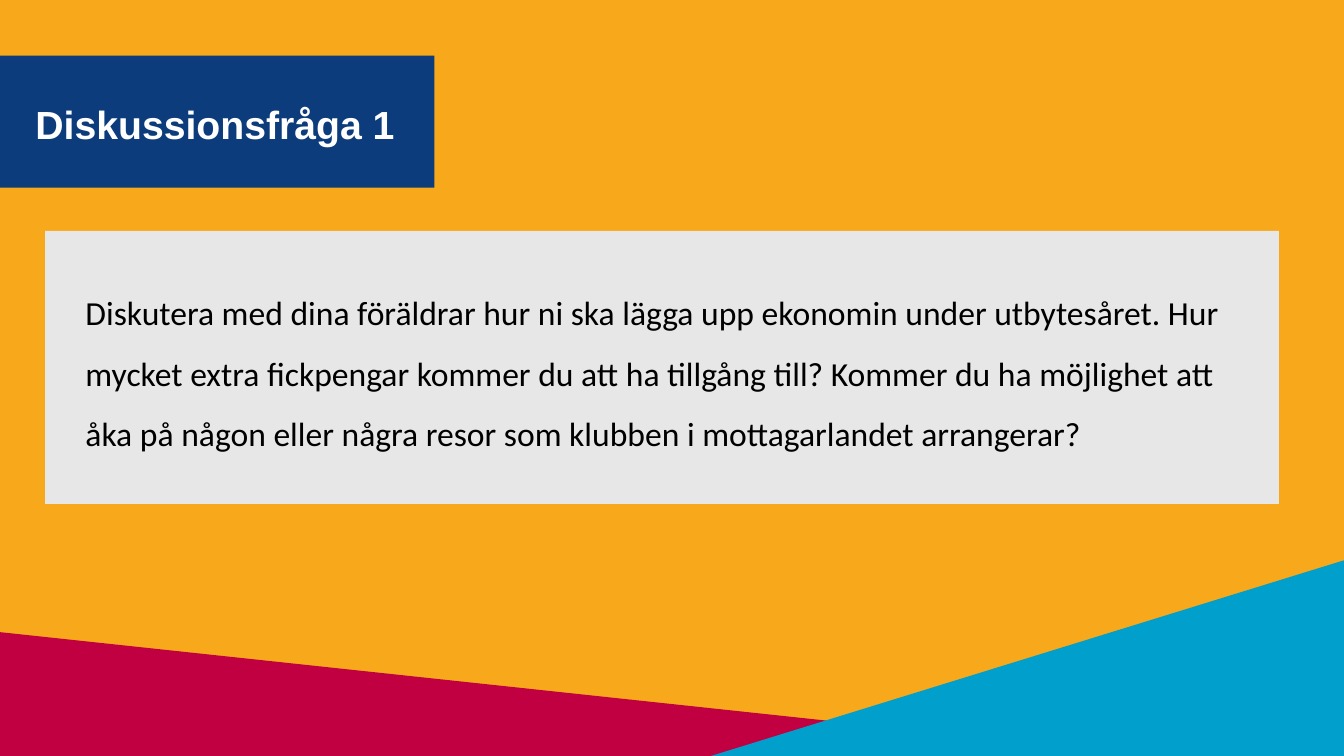
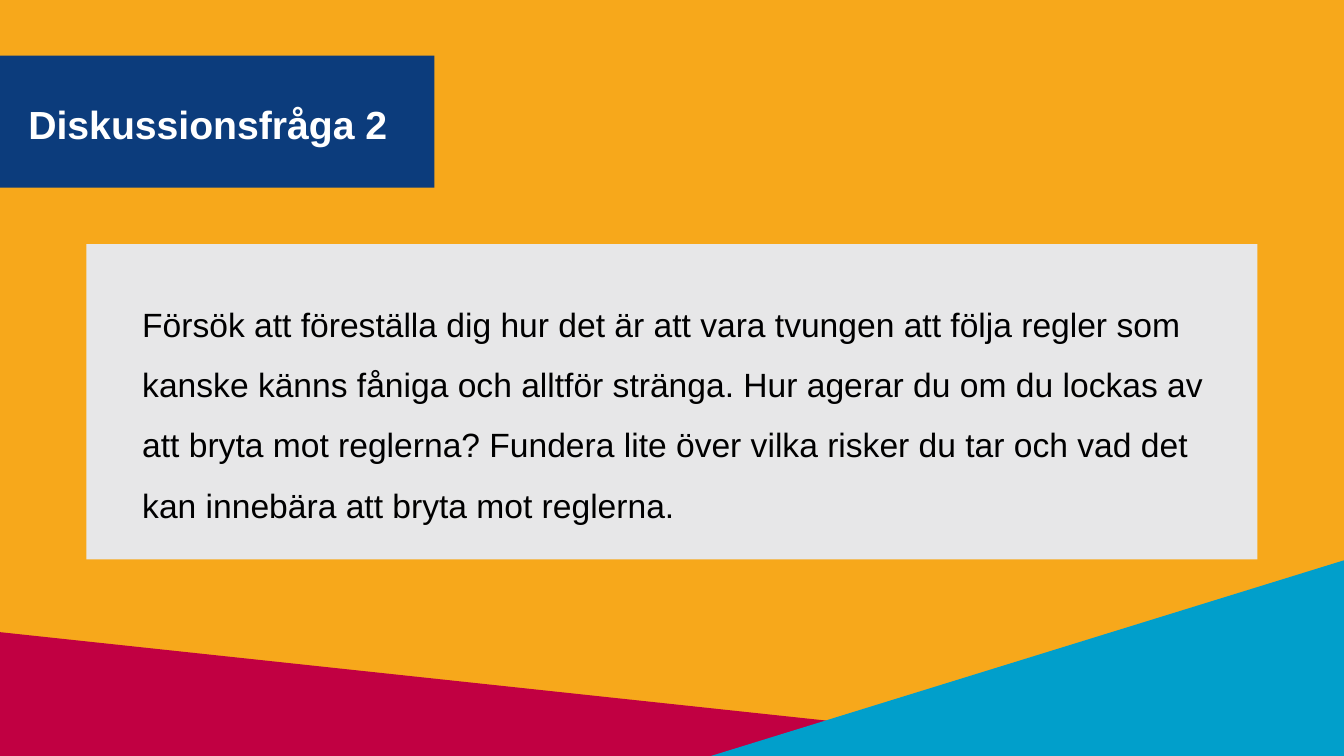
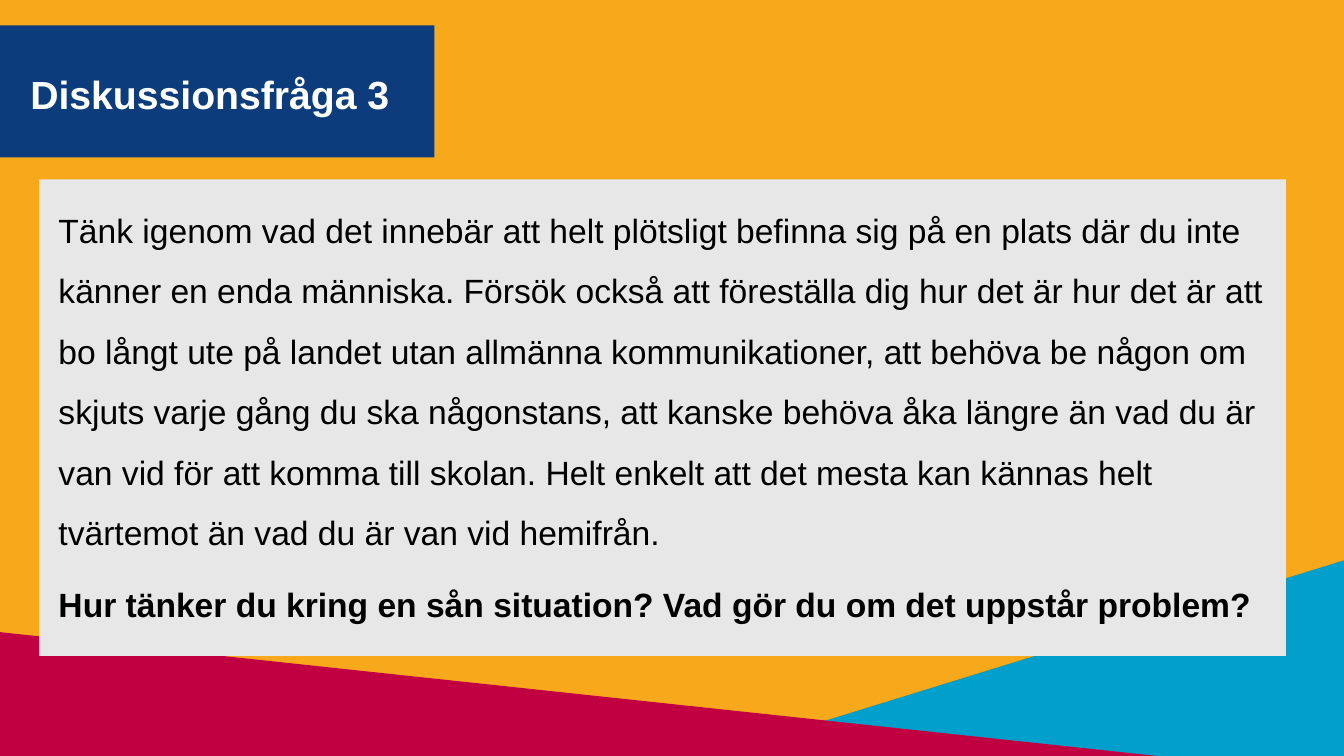
from pptx import Presentation
from pptx import util as u
from pptx.dml.color import RGBColor
from pptx.enum import shapes, text
from pptx.oxml import xmlchemy as xml
from pptx.util import Cm

# Shared colours and sizes
ORANGE = RGBColor(0xF7, 0xA8, 0x1B)
NAVY = RGBColor(0x0C, 0x3C, 0x7C)
GREY = RGBColor(0xE7, 0xE7, 0xE8)
RED = RGBColor(0xC1, 0x00, 0x42)
BLUE = RGBColor(0x01, 0x9F, 0xCB)
WHITE = RGBColor(0xFF, 0xFF, 0xFF)
BLACK = RGBColor(0x00, 0x00, 0x00)

PAGE_WIDTH, PAGE_HEIGHT = 33.87, 19.05
BAND_WIDTH, BAND_HEIGHT = 10.95, 3.33
TITLE_DROP, TITLE_HEIGHT = 0.92, 1.47

# One entry per question; boxes are left, top, width, height in cm
QUESTIONS = [
    dict(
        title="Diskussionsfråga 1", band_top=1.4, title_left=0.64, title_width=10.95,
        panel=(1.14, 5.82, 31.09, 6.88), body=(1.9, 6.73, 29.57, 4.72), font="Calibri",
        paragraphs=[
            ("Diskutera med dina föräldrar hur ni ska lägga upp ekonomin under utbytesåret. "
             "Hur mycket extra fickpengar kommer du att ha tillgång till? Kommer du ha "
             "möjlighet att åka på någon eller några resor som klubben i mottagarlandet "
             "arrangerar?", False),
        ],
    ),
    dict(
        title="Diskussionsfråga 2", band_top=1.4, title_left=0.46, title_width=10.03,
        panel=(2.18, 6.15, 29.51, 7.95), body=(3.33, 7.01, 28.37, 7.92), font="Arial",
        paragraphs=[
            ("Försök att föreställa dig hur det är att vara tvungen att följa regler som "
             "kanske känns fåniga och alltför stränga. Hur agerar du om du lockas av att "
             "bryta mot reglerna? Fundera lite över vilka risker du tar och vad det kan "
             "innebära att bryta mot reglerna.", False),
        ],
    ),
    dict(
        title="Diskussionsfråga 3", band_top=0.64, title_left=0.51, title_width=9.93,
        panel=(0.99, 4.52, 31.42, 12.01), body=(1.22, 4.65, 30.96, 11.15), font="Arial",
        red_on_top=True,
        paragraphs=[
            ("Tänk igenom vad det innebär att helt plötsligt befinna sig på en plats där du "
             "inte känner en enda människa. Försök också att föreställa dig hur det är hur "
             "det är att bo långt ute på landet utan allmänna kommunikationer, att behöva be "
             "någon om skjuts varje gång du ska någonstans, att kanske behöva åka längre än "
             "vad du är van vid för att komma till skolan. Helt enkelt att det mesta kan "
             "kännas helt tvärtemot än vad du är van vid hemifrån.", False),
            ("Hur tänker du kring en sån situation? Vad gör du om det uppstår problem?", True),
        ],
    ),
]


def add_block(page, kind, box, color):
    """Add a plain filled shape without outline or shadow."""
    block = page.shapes.add_shape(kind, *map(Cm, box))
    block.shadow.inherit = False
    block.fill.solid()
    block.fill.fore_color.rgb = color
    block.line.fill.background()
    return block


def add_triangles(page, red_on_top):
    """Add the two wedges along the bottom edge."""
    wedges = [(RED, 0, 29.16, 3.12), (BLUE, PAGE_WIDTH - 15.95, 15.95, 4.93)]
    for color, left, width, height in reversed(wedges) if red_on_top else wedges:
        box = (left, PAGE_HEIGHT - height, width, height)
        wedge = add_block(page, shapes.MSO_SHAPE.RIGHT_TRIANGLE, box, color)
        if color == BLUE:
            wedge.element.spPr.xfrm.set("flipH", "1")


def add_paragraph(para, content, *, font, size, color, bold=False, line_spacing=1.0):
    """Write and format one paragraph without bullet or indent."""
    properties = para._p.get_or_add_pPr()
    properties.set("marL", "0")
    properties.set("indent", "0")
    properties.append(xml.OxmlElement("a:buNone"))
    para.alignment = text.PP_ALIGN.LEFT
    para.line_spacing = line_spacing
    para.space_before = u.Pt(0)
    para.space_after = u.Pt(8)
    span = para.add_run()
    span.text = content
    span.font.name = font
    span.font.size = u.Pt(size)
    span.font.bold = bold
    span.font.color.rgb = color


def fill_placeholder(holder, box, paragraphs, **style):
    """Move a placeholder to the front of the page and write its paragraphs."""
    holder.element.getparent().append(holder.element)
    holder.left, holder.top, holder.width, holder.height = map(Cm, box)
    frame = holder.text_frame
    frame.word_wrap = True
    frame.auto_size = text.MSO_AUTO_SIZE.NONE
    frame.vertical_anchor = text.MSO_ANCHOR.TOP
    for index, (content, bold) in enumerate(paragraphs):
        para = frame.add_paragraph() if index else frame.paragraphs[0]
        add_paragraph(para, content, bold=bold, **style)


def add_question(deck, question):
    """Build one discussion page."""
    page = deck.slides.add_slide(deck.slide_layouts[1])
    rectangle = shapes.MSO_SHAPE.RECTANGLE
    add_triangles(page, question.get("red_on_top", False))

    # Question panel
    add_block(page, rectangle, question["panel"], GREY)
    fill_placeholder(page.placeholders[1], question["body"], question["paragraphs"],
                     font=question["font"], size=24, color=BLACK, line_spacing=1.5)

    # Title band
    top = question["band_top"]
    add_block(page, rectangle, (0, top, BAND_WIDTH, BAND_HEIGHT), NAVY)
    title_box = (question["title_left"], top + TITLE_DROP,
                 question["title_width"], TITLE_HEIGHT)
    fill_placeholder(page.shapes.title, title_box, [(question["title"], True)],
                     font="Arial", size=28, color=WHITE, line_spacing=1.07)


def main():
    deck = Presentation()
    deck.slide_width, deck.slide_height = Cm(PAGE_WIDTH), Cm(PAGE_HEIGHT)
    backdrop = deck.slide_master.background.fill
    backdrop.solid()
    backdrop.fore_color.rgb = ORANGE
    for question in QUESTIONS:
        add_question(deck, question)
    deck.save("out.pptx")


if __name__ == "__main__":
    main()
